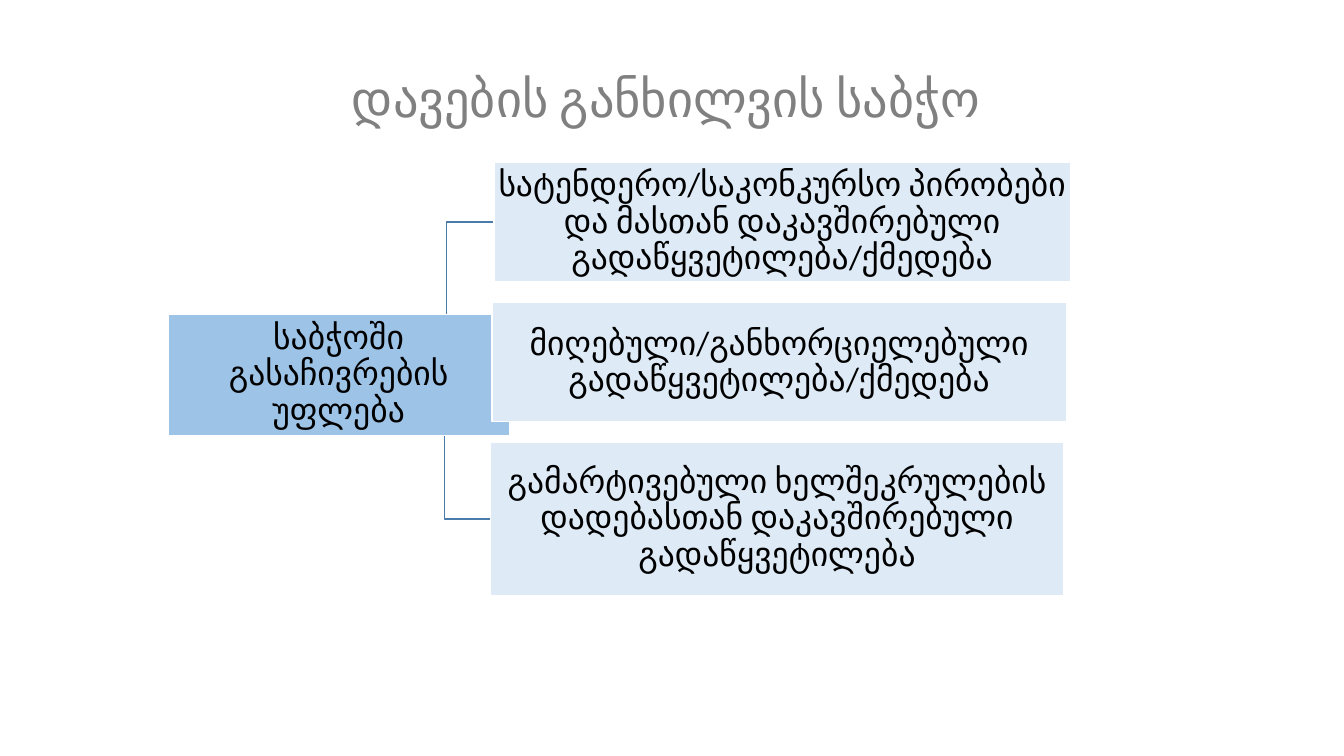
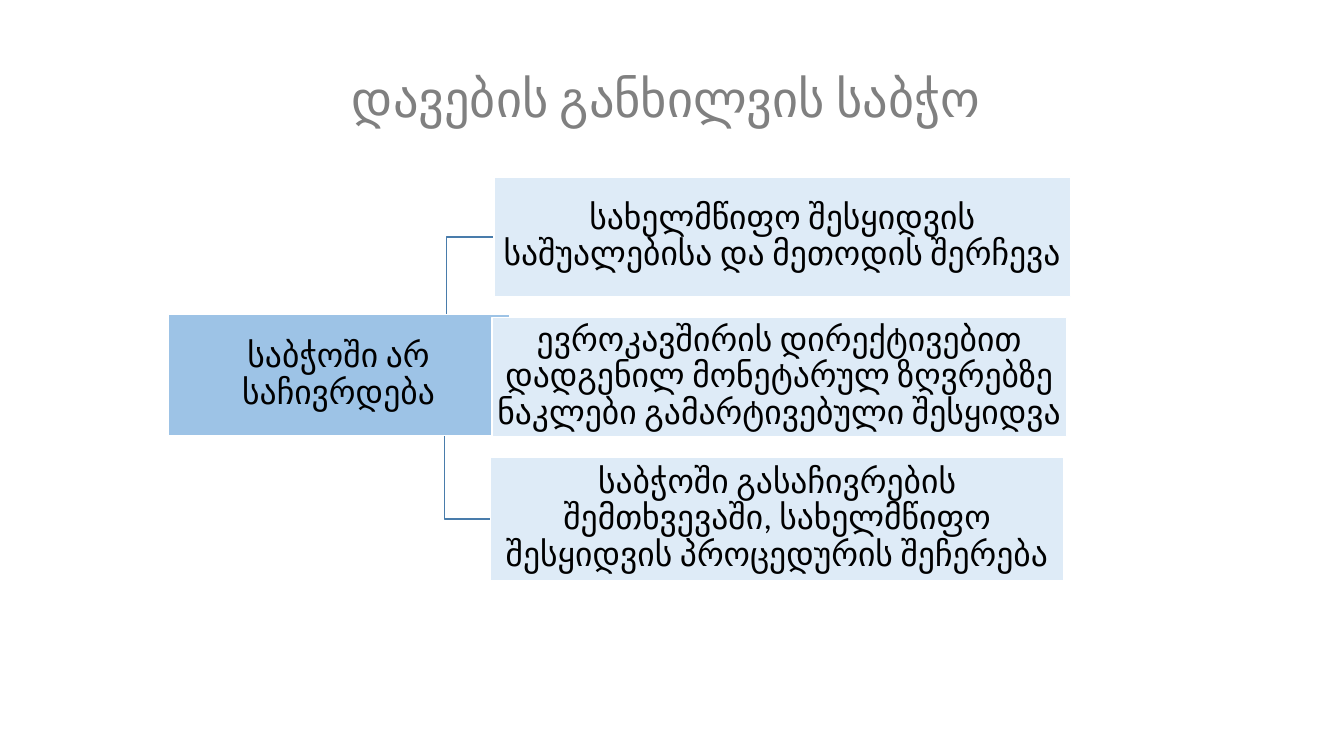
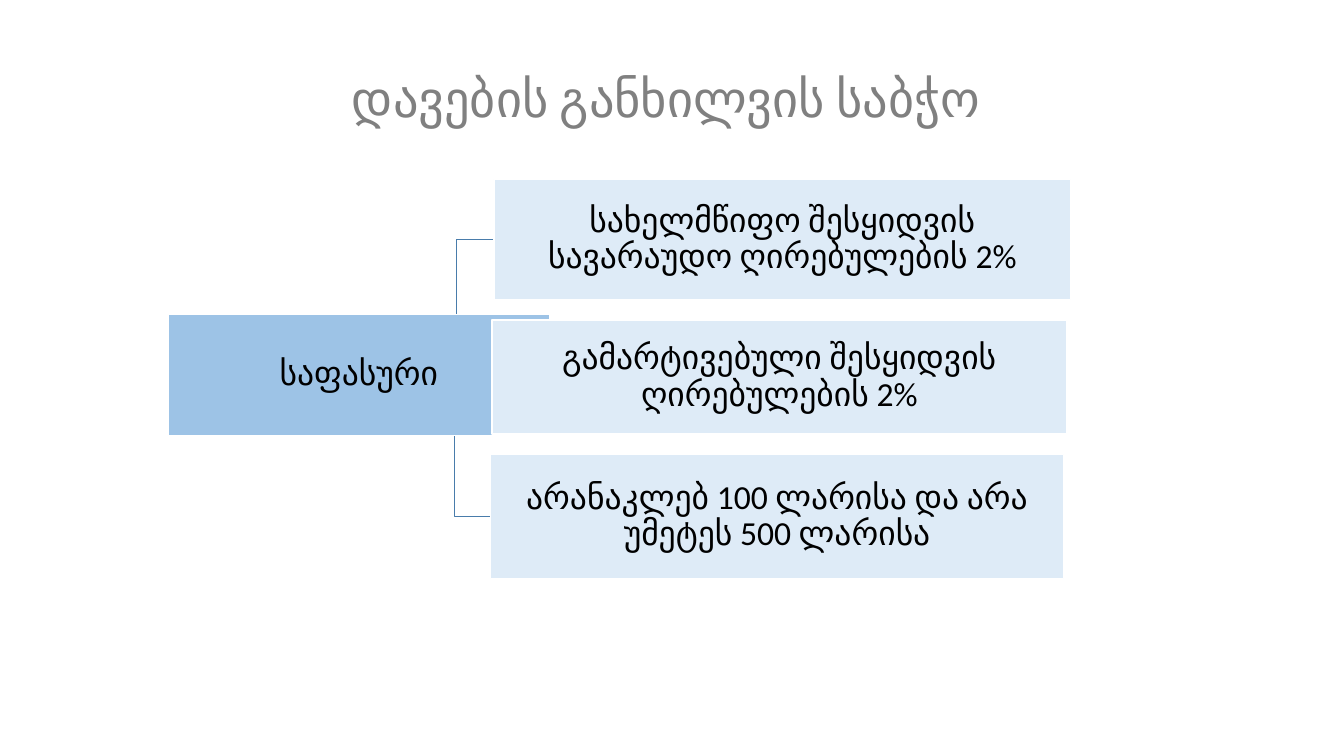
from dataclasses import dataclass

from lxml.etree import SubElement
from pptx import Presentation
from pptx.dml.color import RGBColor
from pptx.enum.shapes import MSO_CONNECTOR, MSO_SHAPE
from pptx.enum.text import MSO_ANCHOR, MSO_AUTO_SIZE, PP_ALIGN
from pptx.oxml.ns import qn
from pptx.slide import Slide
from pptx.text.text import TextFrame
from pptx.util import Cm, Pt

# Shared style
FONT = "Calibri"
TITLE_GREY = RGBColor(0x80, 0x80, 0x80)
BLACK = RGBColor(0x00, 0x00, 0x00)
WHITE = RGBColor(0xFF, 0xFF, 0xFF)
ROOT_BLUE = RGBColor(0x9D, 0xC3, 0xE6)
BRANCH_BLUE = RGBColor(0xDE, 0xEB, 0xF7)
LINK_BLUE = RGBColor(0x49, 0x7C, 0xAB)
TITLE = "დავების განხილვის საბჭო"

# Shared geometry, in centimetres
ROOT_LEFT, ROOT_TOP, ROOT_HEIGHT = 4.23, 7.93, 3.04
LINK_OFFSET = 1.51  # link start, to the right of the root's centre
BRANCH_LEFTS = (12.45, 12.4, 12.36)
BRANCH_WIDTHS = (14.53, 14.48, 14.45)
BRANCH_GAP = 0.52
STACK_CENTRE = 9.55


@dataclass(frozen=True)
class Box:
    text: str
    left: float
    top: float
    width: float
    height: float
    fill: RGBColor

    @property
    def middle(self) -> float:
        return self.top + self.height / 2


@dataclass(frozen=True)
class Diagram:
    root: str
    root_width: float
    branches: tuple[str, str, str]
    heights: tuple[float, float, float]


DIAGRAMS = (
    Diagram(
        "საბჭოში გასაჩივრების უფლება", 8.61,
        ("სატენდერო/საკონკურსო პირობები და მასთან დაკავშირებული გადაწყვეტილება/ქმედება",
         "მიღებული/განხორციელებული გადაწყვეტილება/ქმედება",
         "გამარტივებული ხელშეკრულების დადებასთან დაკავშირებული გადაწყვეტილება"),
        (3.02, 3.0, 3.86)),
    Diagram(
        "საბჭოში არ საჩივრდება", 8.61,
        ("სახელმწიფო შესყიდვის საშუალებისა და მეთოდის შერჩევა",
         "ევროკავშირის დირექტივებით დადგენილ მონეტარულ ზღვრებზე ნაკლები გამარტივებული შესყიდვა",
         "საბჭოში გასაჩივრების შემთხვევაში, სახელმწიფო შესყიდვის პროცედურის შეჩერება"),
        (3.02, 3.0, 3.12)),
    Diagram(
        "საფასური", 9.63,
        ("სახელმწიფო შესყიდვის სავარაუდო ღირებულების 2%",
         "გამარტივებული შესყიდვის ღირებულების 2%",
         "არანაკლებ 100 ლარისა და არა უმეტეს 500 ლარისა"),
        (3.02, 2.87, 3.12)),
)


def write(frame: TextFrame, text: str, size: int, color: RGBColor, anchor: MSO_ANCHOR) -> None:
    frame.word_wrap = True
    frame.auto_size = MSO_AUTO_SIZE.NONE
    frame.vertical_anchor = anchor
    para = frame.paragraphs[0]
    para.alignment = PP_ALIGN.CENTER
    para.line_spacing = 0.9
    span = para.add_run()
    span.text = text
    span.font.name = FONT
    span.font.size = Pt(size)
    span.font.color.rgb = color


def add_title(page: Slide) -> None:
    title = page.shapes.title
    title.left, title.top, title.width, title.height = Cm(4.09), Cm(0.46), Cm(25.4), Cm(2.9)
    write(title.text_frame, TITLE, 36, TITLE_GREY, MSO_ANCHOR.BOTTOM)


def add_box(page: Slide, box: Box) -> None:
    shape = page.shapes.add_shape(
        MSO_SHAPE.RECTANGLE, Cm(box.left), Cm(box.top), Cm(box.width), Cm(box.height))
    shape.shadow.inherit = False
    shape.fill.solid()
    shape.fill.fore_color.rgb = box.fill
    shape.line.color.rgb = WHITE
    shape.line.width = Pt(1)
    frame = shape.text_frame
    frame.margin_left = frame.margin_right = frame.margin_top = frame.margin_bottom = Cm(0.04)
    write(frame, box.text, 24, BLACK, MSO_ANCHOR.MIDDLE)


def add_link(page: Slide, root: Box, branch: Box) -> None:
    start = root.left + root.width / 2 + LINK_OFFSET
    link = page.shapes.add_connector(
        MSO_CONNECTOR.ELBOW, Cm(start), Cm(root.middle), Cm(branch.left), Cm(branch.middle))
    link.line.color.rgb = LINK_BLUE
    link.line.width = Pt(1)
    SubElement(link._element.spPr, qn("a:effectLst"))


def stack_branches(diagram: Diagram) -> list[Box]:
    """Place the branches with equal gaps around the stack's centre."""
    total = sum(diagram.heights) + BRANCH_GAP * (len(diagram.heights) - 1)
    top = STACK_CENTRE - total / 2
    boxes = []
    for text, left, width, height in zip(
            diagram.branches, BRANCH_LEFTS, BRANCH_WIDTHS, diagram.heights):
        boxes.append(Box(text, left, top, width, height, BRANCH_BLUE))
        top += height + BRANCH_GAP
    return boxes


def add_diagram(page: Slide, diagram: Diagram) -> None:
    root = Box(diagram.root, ROOT_LEFT, ROOT_TOP, diagram.root_width, ROOT_HEIGHT, ROOT_BLUE)
    branches = stack_branches(diagram)
    # Links lie behind the boxes; the middle branch touches the root
    for branch in (branches[-1], branches[0]):
        add_link(page, root, branch)
    for box in (root, *branches):
        add_box(page, box)


def main() -> None:
    deck = Presentation()
    deck.slide_width, deck.slide_height = Cm(33.87), Cm(19.05)
    title_only = deck.slide_layouts[5]
    for diagram in DIAGRAMS:
        page = deck.slides.add_slide(title_only)
        add_title(page)
        add_diagram(page, diagram)
    deck.save("out.pptx")


if __name__ == "__main__":
    main()
